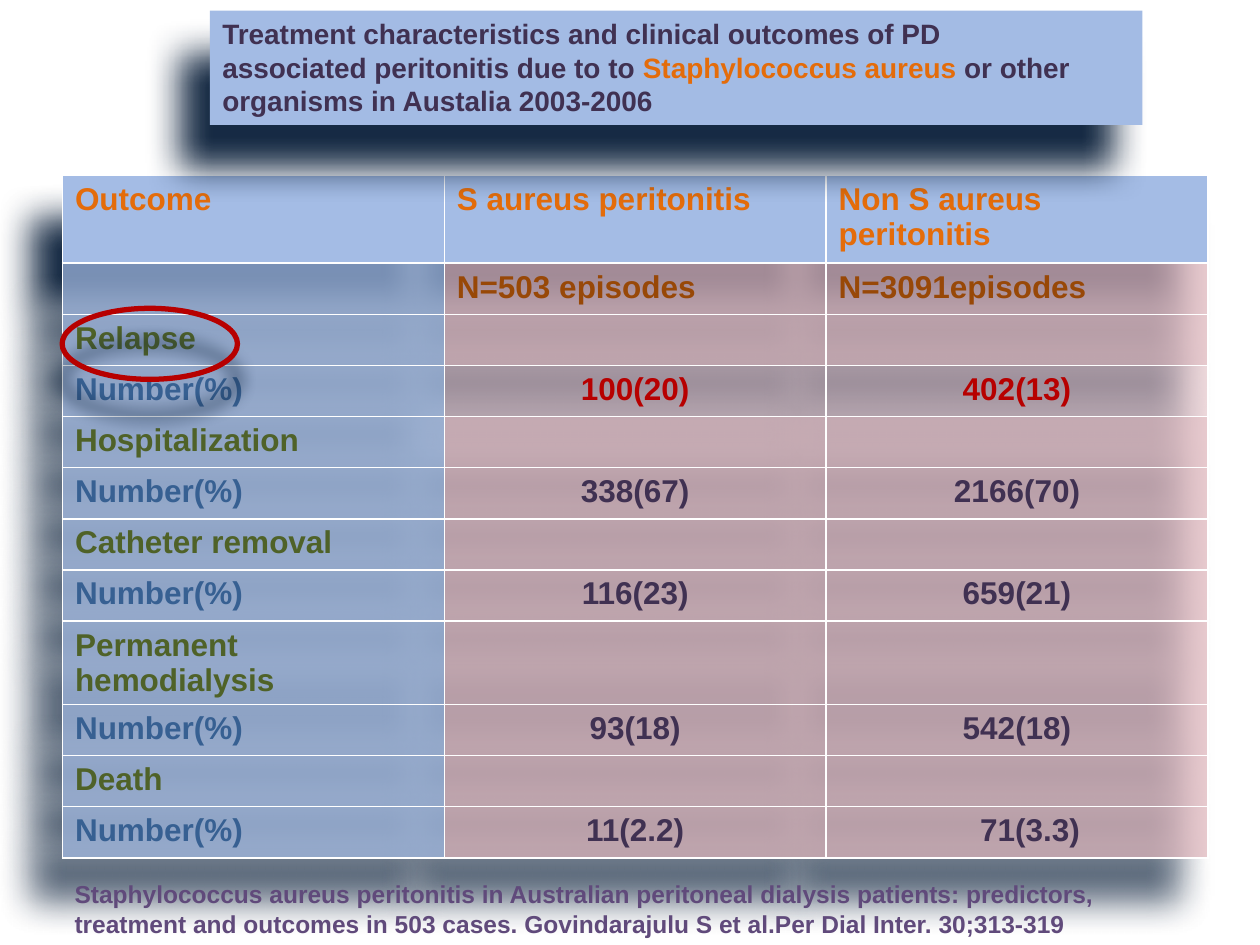
from lxml.etree import SubElement
from pptx import Presentation
from pptx.dml.color import RGBColor
from pptx.enum.shapes import MSO_SHAPE as Shape
from pptx.enum.text import MSO_ANCHOR as Anchor, MSO_AUTO_SIZE as AutoSize, PP_ALIGN as Align
from pptx.oxml.ns import qn
from pptx.util import Pt

COLORS = {
    "blue": "A4BCE5", "title_blue": "A3BBE4", "pink": "DFB5BB", "navy": "0F243E",
    "orange": "E46C0A", "brown": "984807", "green": "4F6228", "steel": "376092",
    "red": "B70000", "purple": "403152", "violet": "604A7B",
}


def rgb(name):
    return RGBColor.from_string(COLORS[name])


class SlideBuilder:
    font = "Arial"

    def __init__(self, slide):
        self.slide = slide

    def add_run(self, p, text, size, color):
        r = p.add_run()
        r.text = text
        r.font.name, r.font.size, r.font.bold = self.font, Pt(size), True
        r.font.color.rgb = rgb(color)

    def shadow(self, props, blur, dist, angle, alpha, index=None):
        effects = SubElement(props, qn("a:effectLst"))
        if index is not None:
            props.insert(index, effects)
        outer = SubElement(effects, qn("a:outerShdw"), blurRad=str(Pt(blur)),
                           dist=str(Pt(dist)), dir=str(angle * 60000),
                           algn="ctr", rotWithShape="0")
        clr = SubElement(outer, qn("a:srgbClr"), val=COLORS["navy"])
        SubElement(clr, qn("a:alpha"), val=str(alpha * 1000))

    def fill_text(self, sp, paragraphs, size):
        tf = sp.text_frame
        tf.word_wrap = True
        tf.auto_size = AutoSize.SHAPE_TO_FIT_TEXT
        tf.vertical_anchor = Anchor.TOP
        for i, runs in enumerate(paragraphs):
            p = tf.add_paragraph() if i else tf.paragraphs[0]
            p.alignment = Align.LEFT
            for text, color in runs:
                self.add_run(p, text, size, color)

    def shape(self, kind, box, fill=None, line=None, line_width=1):
        sp = self.slide.shapes.add_shape(kind, *map(Pt, box))
        if fill:
            sp.fill.solid()
            sp.fill.fore_color.rgb = rgb(fill)
        else:
            sp.fill.background()
        if line:
            sp.line.color.rgb = rgb(line)
            sp.line.width = Pt(line_width)
        else:
            sp.line.fill.background()
        return sp

    def text(self, box, paragraphs, size):
        sp = self.slide.shapes.add_textbox(*map(Pt, box))
        self.fill_text(sp, paragraphs, size)

    def table(self, box, rows, heights):
        frame = self.slide.shapes.add_table(len(rows), len(rows[0]), *map(Pt, box))
        table = frame.table
        for row, height in zip(table.rows, heights):
            row.height = Pt(height)
        self.shadow(table._tbl.tblPr, 20, 30, 125, 96, index=0)
        return table

    def cell(self, cell, text, color, fill, alpha, align):
        cell.fill.solid()
        cell.fill.fore_color.rgb = rgb(fill)
        if alpha < 100:
            clr = cell._tc.tcPr.find(".//" + qn("a:srgbClr"))
            SubElement(clr, qn("a:alpha"), val=str(alpha * 1000))
        p = cell.text_frame.paragraphs[0]
        p.alignment = align
        if text:
            self.add_run(p, text, 18, color)
        else:
            p.font.size = Pt(18)


OUTCOMES = [
    ("Relapse", "100(20)", "402(13)"),
    ("Hospitalization", "338(67)", "2166(70)"),
    ("Catheter removal", "116(23)", "659(21)"),
    ("Permanent hemodialysis", "93(18)", "542(18)"),
    ("Death", "11(2.2)", "71(3.3)"),
]


def main():
    prs = Presentation()
    prs.slide_width, prs.slide_height = Pt(720), Pt(540)
    s = SlideBuilder(prs.slides.add_slide(prs.slide_layouts[6]))

    # Outcome table: two header rows, then a name row and a number row per outcome
    rows = [("Outcome", "S aureus peritonitis", "Non S aureus peritonitis"),
            ("", "N=503 episodes", "N=3091episodes")]
    for name, aureus, other in OUTCOMES:
        rows += [(name, "", ""), ("Number(%)", aureus, other)]
    heights = [50 if i == 0 else 47.5 if "Permanent" in row[0] else 29.25
               for i, row in enumerate(rows)]
    table = s.table((35.7, 100.4, 654.6, sum(heights)), rows, heights)
    for i, row in enumerate(rows):
        is_number = row[0] == "Number(%)"
        is_relapse = is_number and i == 3
        for j, text in enumerate(row):
            fill = "blue" if i == 0 or j == 0 else "pink"
            alpha = 100 if i == 0 else 50 if is_relapse and j else 70
            if i < 2:
                color = ("orange", "brown")[i]
            elif j == 0:
                color = "steel" if is_number else "green"
            else:
                color = "red" if is_relapse else "purple"
            align = Align.CENTER if is_number and j else Align.LEFT
            s.cell(table.cell(i, j), text, color, fill, alpha, align)
    # The last value sits slightly right of centre
    table.cell(len(rows) - 1, 2).margin_left = Pt(22.2)

    # Title
    title = s.shape(Shape.RECTANGLE, (120, 6, 532.8, 65.4), fill="title_blue")
    s.shadow(title._element.spPr, 20, 30, 125, 96)
    s.fill_text(title, [
        [("Treatment characteristics and clinical outcomes of PD", "purple")],
        [("associated peritonitis due to to ", "purple"),
         ("Staphylococcus aureus", "orange"),
         (" or other organisms in Austalia 2003-2006", "purple")],
    ], 16)

    # Ring around the relapse row
    ring = s.shape(Shape.OVAL, (35.5, 176.2, 100.2, 40.6), line="red", line_width=3)
    s.shadow(ring._element.spPr, 10, 20, 90, 100)

    # Citation
    s.text((35.5, 499, 654.6, 41), [[
        ("Staphylococcus aureus peritonitis in Australian peritoneal dialysis patients: "
         "predictors, treatment and outcomes in 503 cases. "
         "Govindarajulu S et al.Per Dial Inter. 30;313-319", "violet")]], 14)

    prs.save("out.pptx")


if __name__ == "__main__":
    main()
